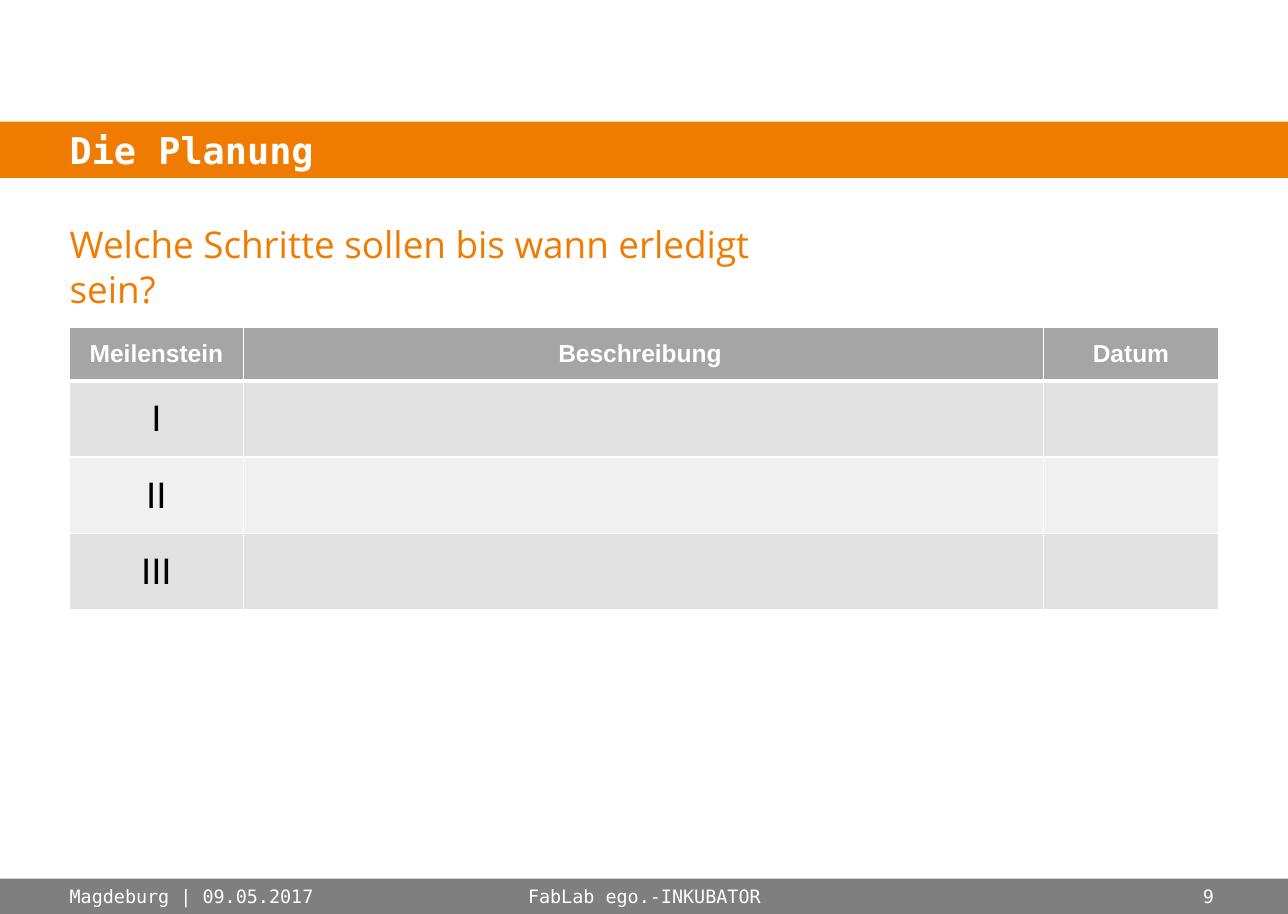
from lxml.etree import SubElement
from pptx import Presentation
from pptx.dml.color import RGBColor
from pptx.enum.shapes import MSO_SHAPE
from pptx.enum.text import MSO_ANCHOR, MSO_AUTO_SIZE, PP_ALIGN
from pptx.oxml.ns import qn
from pptx.util import Pt

PX = 9144
ORANGE = RGBColor(0xEF, 0x7C, 0x00)
GREY = RGBColor(0x7F, 0x7F, 0x7F)
HEAD = RGBColor(0xA5, 0xA5, 0xA5)
DARK = RGBColor(0xE1, 0xE1, 0xE1)
LIGHT = RGBColor(0xF0, 0xF0, 0xF0)
WHITE = RGBColor(0xFF, 0xFF, 0xFF)
BLACK = RGBColor(0, 0, 0)
MONO = "DejaVu Sans Mono"
WIDTH, HEIGHT = 1165, 827
LEFT = 63
BAR_TOP, BAR_TALL = 795, 32
INSET = 11


def write(frame, text, name, size, color, align=PP_ALIGN.LEFT, bold=False):
    frame.text = text
    frame.word_wrap = True
    line = frame.paragraphs[0]
    line.alignment = align
    font = line.font
    font.name, font.size, font.bold = name, Pt(size), bold
    font.color.rgb = color


def add_label(left, top, width, height, anchor, *style):
    box = slide.shapes.add_textbox(left * PX, top * PX, width * PX, height * PX)
    frame = box.text_frame
    frame.margin_left = frame.margin_right = 0
    frame.margin_top = frame.margin_bottom = 0
    frame.vertical_anchor = anchor
    write(frame, *style)


deck = Presentation()
deck.slide_width, deck.slide_height = WIDTH * PX, HEIGHT * PX
slide = deck.slides.add_slide(deck.slide_layouts[5])

# Title band
title = slide.shapes.title
title.left, title.top = 0, 110 * PX
title.width, title.height = WIDTH * PX, 51 * PX
title.fill.solid()
title.fill.fore_color.rgb = ORANGE
frame = title.text_frame
frame.auto_size = MSO_AUTO_SIZE.NONE
frame.margin_left = LEFT * PX
frame.margin_right = frame.margin_top = frame.margin_bottom = 0
frame.vertical_anchor = MSO_ANCHOR.MIDDLE
write(frame, "Die Planung", MONO, 24, WHITE, PP_ALIGN.LEFT, True)

# Question
add_label(LEFT, 201, 685, 40, MSO_ANCHOR.TOP,
          "Welche Schritte sollen bis wann erledigt sein?",
          "Open Sans", 24, ORANGE)

# Footer
bar = slide.shapes.add_shape(MSO_SHAPE.RECTANGLE, 0, BAR_TOP * PX,
                             WIDTH * PX, BAR_TALL * PX)
bar.shadow.inherit = False
bar.fill.solid()
bar.fill.fore_color.rgb = GREY
bar.line.fill.background()
for left, width, text, align in (
    (LEFT, 271, "Magdeburg | 09.05.2017", PP_ALIGN.LEFT),
    (426, 314, "FabLab ego.-INKUBATOR", PP_ALIGN.CENTER),
    (1020, 78, "9", PP_ALIGN.RIGHT),
):
    add_label(left, BAR_TOP, width, BAR_TALL, MSO_ANCHOR.MIDDLE,
              text, MONO, 12, WHITE, align)

# Milestone table
plan = (
    ("Meilenstein", "Beschreibung ", "Datum"),
    ("I", "", ""),
    ("II", "", ""),
    ("III", "", ""),
)
widths = (157, 724, 158)
heights = (48, 69, 69, 69)
fills = (HEAD, DARK, LIGHT, DARK)
table = slide.shapes.add_table(
    len(plan), len(widths), LEFT * PX, 296 * PX,
    sum(widths) * PX, sum(heights) * PX).table
table.horz_banding = False
for column, width in zip(table.columns, widths):
    column.width = width * PX
for r, texts in enumerate(plan):
    table.rows[r].height = heights[r] * PX
    edges = {"lnL": 1, "lnR": 1, "lnT": 3 if r == 1 else 1,
             "lnB": 3 if r == 0 else 1}
    size, color = (16, WHITE) if r == 0 else (24, BLACK)
    for c, text in enumerate(texts):
        cell = table.cell(r, c)
        props = cell._tc.get_or_add_tcPr()
        for edge, points in edges.items():
            line = SubElement(props, qn(f"a:{edge}"), w=str(Pt(points)))
            paint = SubElement(line, qn("a:solidFill"))
            SubElement(paint, qn("a:srgbClr"), val=str(WHITE))
        cell.fill.solid()
        cell.fill.fore_color.rgb = fills[r]
        cell.vertical_anchor = MSO_ANCHOR.MIDDLE
        cell.margin_left = cell.margin_right = INSET * PX
        cell.margin_top = cell.margin_bottom = INSET * PX
        if text:
            write(cell.text_frame, text, "Arial", size, color,
                  PP_ALIGN.CENTER, r == 0)

deck.save("out.pptx")
